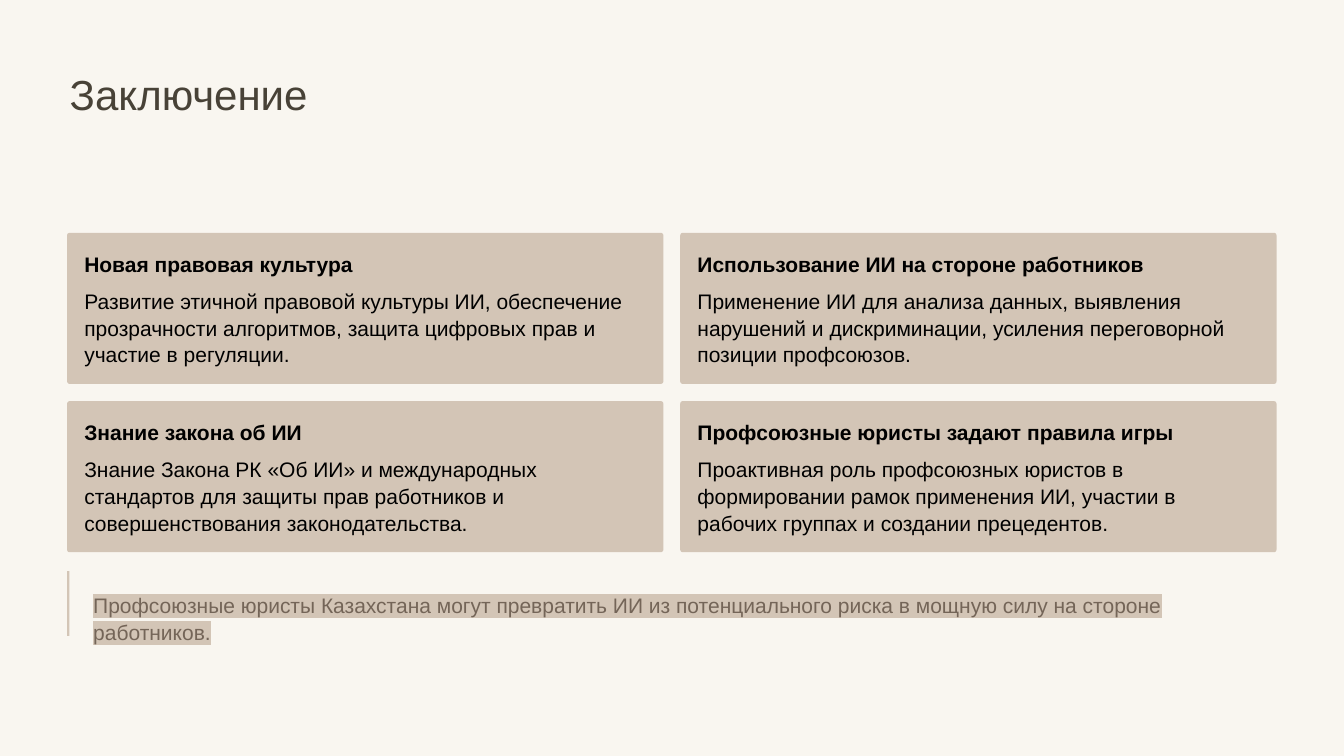
"""Build the closing slide with four theses and a final remark."""
from dataclasses import dataclass

from lxml.etree import SubElement
from pptx import Presentation
from pptx.dml.color import RGBColor
from pptx.enum.shapes import MSO_SHAPE
from pptx.oxml.ns import qn
from pptx.slide import Slide
from pptx.util import Cm, Pt

CREAM = RGBColor(0xF9, 0xF6, 0xF0)
SAND = RGBColor(0xD3, 0xC5, 0xB6)
DARK = RGBColor(0x48, 0x42, 0x37)
BROWN = RGBColor(0x74, 0x65, 0x58)
BLACK = RGBColor(0, 0, 0)

LEFT, TOP = 2.03, 7.04
WIDE, HIGH = 18.03, 4.57
STEP_X, STEP_Y = 18.54, 5.09
PAD = 0.52


@dataclass
class Box:
    """Place and size in centimetres."""
    left: float
    top: float
    width: float
    height: float


@dataclass
class Style:
    """Look of a line of text."""
    size: float
    lead: float
    color: RGBColor
    bold: bool = False
    wrap: bool = False
    mark: RGBColor | None = None


@dataclass
class Card:
    """Heading and body of a thesis."""
    head: str
    body: str


TITLE = Style(36, 45, DARK)
HEAD = Style(18, 22.5, BLACK, bold=True)
BODY = Style(18, 23, BLACK, wrap=True)
QUOTE = Style(18, 23, BROWN, mark=SAND)

CARDS = [
    Card("Новая правовая культура",
         "Развитие этичной правовой культуры ИИ, обеспечение прозрачности "
         "алгоритмов, защита цифровых прав и участие в регуляции."),
    Card("Использование ИИ на стороне работников",
         "Применение ИИ для анализа данных, выявления нарушений и "
         "дискриминации, усиления переговорной позиции профсоюзов."),
    Card("Знание закона об ИИ",
         "Знание Закона РК «Об ИИ» и международных стандартов для защиты "
         "прав работников и совершенствования законодательства."),
    Card("Профсоюзные юристы задают правила игры",
         "Проактивная роль профсоюзных юристов в формировании рамок "
         "применения ИИ, участии в рабочих группах и создании прецедентов."),
]


def add_text(slide: Slide, box: Box, text: str, style: Style) -> None:
    """Add a text box without margins."""
    frame = slide.shapes.add_textbox(
        Cm(box.left), Cm(box.top), Cm(box.width), Cm(box.height)).text_frame
    frame.margin_left = frame.margin_right = 0
    frame.margin_top = frame.margin_bottom = 0
    frame.word_wrap = style.wrap
    para = frame.paragraphs[0]
    para.line_spacing = Pt(style.lead)
    run = para.add_run()
    run.text = text
    font = run.font
    font.size = Pt(style.size)
    font.bold = style.bold
    font.color.rgb = style.color
    if style.mark is not None:
        mark = SubElement(run._r.get_or_add_rPr(), qn("a:highlight"))
        SubElement(mark, qn("a:srgbClr"), val=str(style.mark))
    font.name = "Arial"


def add_panel(slide: Slide, box: Box, kind: MSO_SHAPE, curve: float = 0) -> None:
    """Add a plain sand shape."""
    panel = slide.shapes.add_shape(
        kind, Cm(box.left), Cm(box.top), Cm(box.width), Cm(box.height))
    panel.shadow.inherit = False
    panel.fill.solid()
    panel.fill.fore_color.rgb = SAND
    panel.line.fill.background()
    if curve:
        panel.adjustments[0] = curve


def add_card(slide: Slide, card: Card, left: float, top: float) -> None:
    """Add a panel with its heading and body."""
    add_panel(slide, Box(left, top, WIDE, HIGH), MSO_SHAPE.ROUNDED_RECTANGLE, 0.017)
    inner = WIDE - 2 * PAD
    add_text(slide, Box(left + PAD, top + PAD, inner, 0.79), card.head, HEAD)
    add_text(slide, Box(left + PAD, top + 1.63, inner, 2.44), card.body, BODY)


def main() -> None:
    """Build and save the slide."""
    deck = Presentation()
    deck.slide_width, deck.slide_height = Cm(40.64), Cm(22.86)
    slide = deck.slides.add_slide(deck.slide_layouts[6])
    slide.background.fill.solid()
    slide.background.fill.fore_color.rgb = CREAM

    add_text(slide, Box(2.11, 2.01, 26.31, 1.6), "Заключение", TITLE)
    for index, card in enumerate(CARDS):
        row, col = divmod(index, 2)
        add_card(slide, card, LEFT + col * STEP_X, TOP + row * STEP_Y)
    add_text(slide, Box(2.82, 17.86, 35.79, 0.81),
             "Профсоюзные юристы Казахстана могут превратить ИИ из "
             "потенциального риска в мощную силу на стороне работников.", QUOTE)
    add_panel(slide, Box(LEFT, 17.27, 0.07, 1.96), MSO_SHAPE.RECTANGLE)
    deck.save("out.pptx")


if __name__ == "__main__":
    main()
